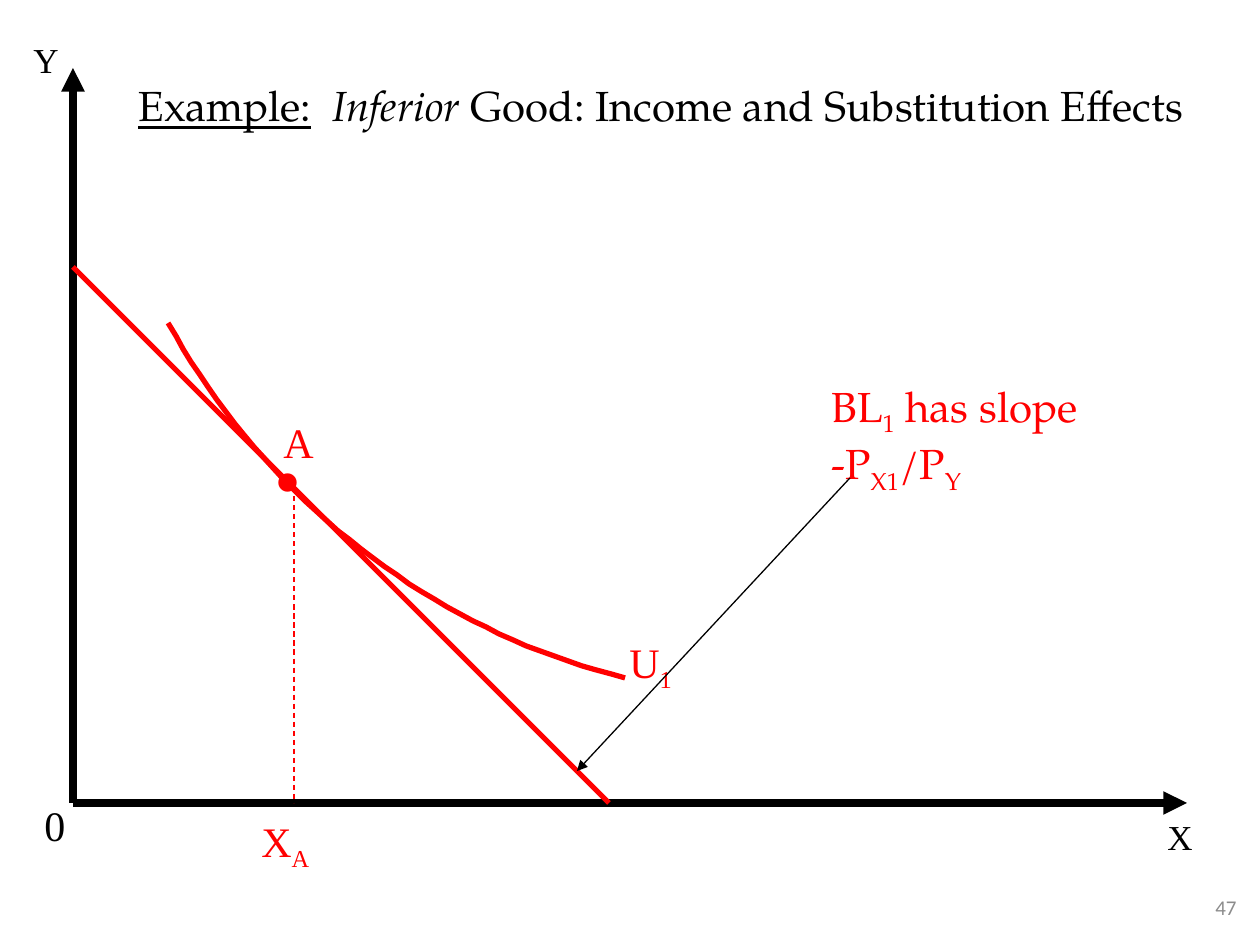
from lxml.etree import SubElement
from pptx import Presentation
from pptx.dml.color import RGBColor
from pptx.enum.dml import MSO_LINE_DASH_STYLE as Dash
from pptx.enum.shapes import MSO_CONNECTOR as Connector
from pptx.enum.text import MSO_ANCHOR as Anchor, MSO_AUTO_SIZE as AutoSize, PP_ALIGN as Align
from pptx.oxml.ns import qn
from pptx.util import Pt

EMU_PER_PX = 914400 / 126
BLACK = RGBColor(0x00, 0x00, 0x00)
RED = RGBColor(0xFF, 0x00, 0x00)
GRAY = RGBColor(0x8C, 0x8C, 0x8C)
TIMES, PAGELLA = "Times New Roman", "TeX Gyre Pagella"

# Key points of the diagram, in px
ORIGIN = (73, 803)
X_END, Y_END = (1187, 803), (73, 68)
CURVE = [(625, 678), (432, 630), (267, 501), (168, 323)]  # cubic control points
CURVE_STEPS = 40

# start, end, colour, width in pt, dashed, arrowhead
AXES = [
    (ORIGIN, X_END, BLACK, 4.5, False, True),
    (ORIGIN, Y_END, BLACK, 4.5, False, True),
]
BUDGET_LINE = ((73, 267), (609, 803), RED, 3, False, False)
DROP_LINE = ((294, 478), (294, 803), RED, 0.75, True, False)
POINTER = ((850, 478), (577, 771), BLACK, 0.75, False, True)

# box, font, size, colour, paragraphs; each paragraph lists (text, style) runs
LABELS = [
    ((32, 793, 47, 63), TIMES, 24, BLACK, [[("0", "")]]),
    ((21, 32, 50, 54), TIMES, 20, BLACK, [[("Y", "")]]),
    ((1155, 809, 50, 54), TIMES, 20, BLACK, [[("X", "")]]),
    ((262, 425, 52, 105), TIMES, 44, RED, [[("•", "")]]),
    ((271, 410, 55, 63), TIMES, 24, RED, [[("A", "")]]),
    ((617, 630, 69, 63), TIMES, 24, RED, [[("U", ""), ("1", "sub")]]),
    ((249, 809, 76, 63), TIMES, 24, RED, [[("X", ""), ("A", "sub")]]),
    ((819, 374, 282, 113), PAGELLA, 24, RED, [
        [("BL", ""), ("1", "sub"), (" has slope", "")],
        [("-P", ""), ("X1", "sub"), ("/P", ""), ("Y", "sub")],
    ]),
]
TITLE = ((126, 73, 1102, 63), PAGELLA, 24, BLACK, [[
    ("Example:", "underline"), ("\t", ""), ("Inferior", "italic"),
    (" Good: Income and Substitution Effects", ""),
]])
TITLE_TAB = 194
PAGE_NUMBER = ((1155, 882, 94, 50), "Calibri", 12, GRAY, [[("47", "")]])


def px(length):
    return round(length * EMU_PER_PX)


def add_line(page, start, end, color, width, dashed, arrow):
    line = page.shapes.add_connector(Connector.STRAIGHT, *map(px, start + end))
    line.line.color.rgb = color
    line.line.width = Pt(width)
    if dashed:
        line.line.dash_style = Dash.DASH
    if arrow:
        SubElement(line.line._get_or_add_ln(), qn("a:tailEnd"), type="triangle")
    SubElement(line._element.spPr, qn("a:effectLst"))


def add_curve(page, controls):
    def point(t):
        weights = ((1 - t) ** 3, 3 * t * (1 - t) ** 2, 3 * t ** 2 * (1 - t), t ** 3)
        return tuple(sum(w * c[axis] for w, c in zip(weights, controls)) for axis in (0, 1))

    points = [point(step / CURVE_STEPS) for step in range(CURVE_STEPS + 1)]
    builder = page.shapes.build_freeform(*points[0], scale=EMU_PER_PX)
    builder.add_line_segments(points[1:], close=False)
    curve = builder.convert_to_shape()
    curve.shadow.inherit = False
    curve.fill.background()
    curve.line.color.rgb = RED
    curve.line.width = Pt(3)


def add_text(page, box, font, size, color, paragraphs, wrap=False, tab=None):
    text_box = page.shapes.add_textbox(*map(px, box))
    frame = text_box.text_frame
    frame.word_wrap = wrap
    frame.auto_size = AutoSize.SHAPE_TO_FIT_TEXT
    for index, runs in enumerate(paragraphs):
        para = frame.add_paragraph() if index else frame.paragraphs[0]
        if tab:
            tabs = SubElement(para._p.get_or_add_pPr(), qn("a:tabLst"))
            SubElement(tabs, qn("a:tab"), pos=str(px(tab)), algn="l")
        para.font.name = font
        para.font.size = Pt(size)
        para.font.color.rgb = color
        for text, style in runs:
            span = para.add_run()
            span.text = text
            if style == "sub":
                span._r.get_or_add_rPr().set("baseline", "-25000")
            elif style == "underline":
                span.font.underline = True
            elif style == "italic":
                span.font.italic = True
    return frame


def main():
    deck = Presentation()
    deck.slide_width, deck.slide_height = px(1260), px(945)
    page = deck.slides.add_slide(deck.slide_layouts[6])

    # Axes, budget line and indifference curve
    for line in AXES + [BUDGET_LINE]:
        add_line(page, *line)
    add_curve(page, CURVE)

    # Labels, then the lines that lie over them
    for label in LABELS:
        add_text(page, *label)
    for line in (DROP_LINE, POINTER):
        add_line(page, *line)

    # Title and page number
    add_text(page, *TITLE, wrap=True, tab=TITLE_TAB)
    number = add_text(page, *PAGE_NUMBER, wrap=True)
    number.auto_size = AutoSize.NONE
    number.vertical_anchor = Anchor.MIDDLE
    number.paragraphs[0].alignment = Align.RIGHT

    deck.save("out.pptx")


if __name__ == "__main__":
    main()
